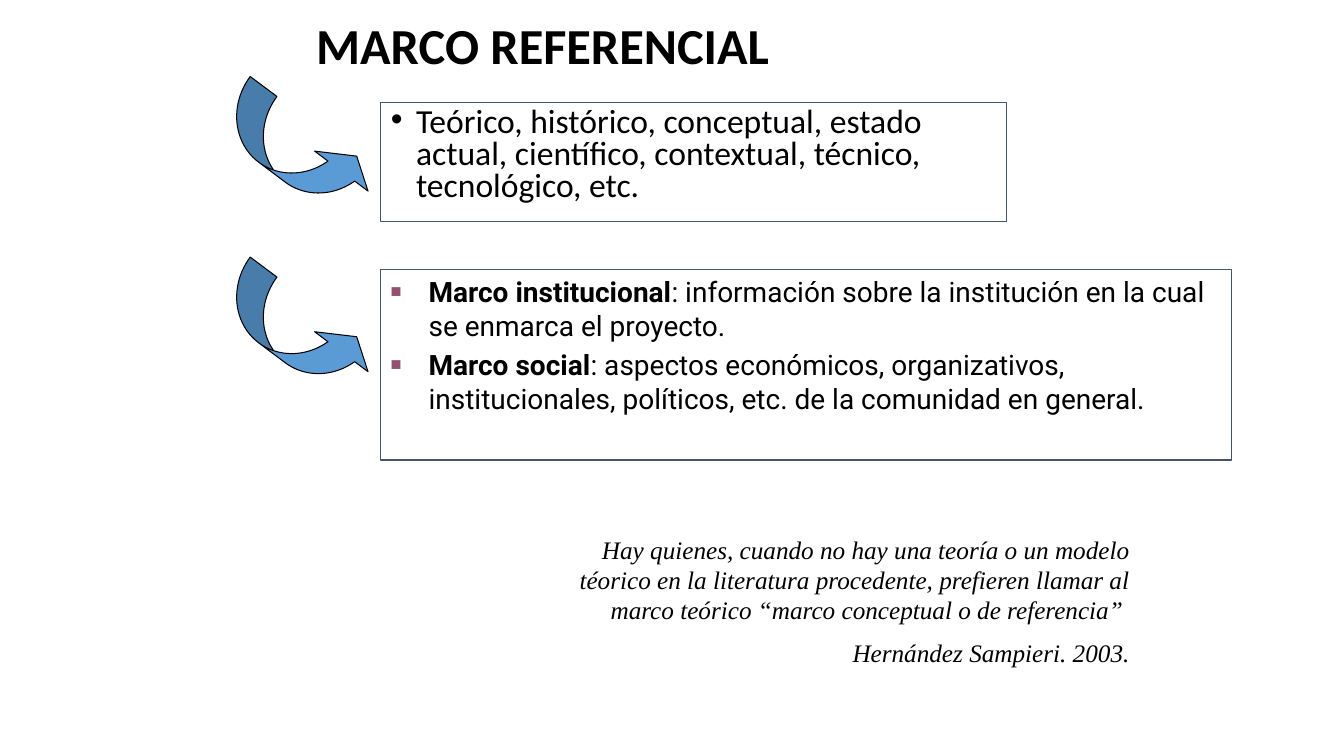
from dataclasses import dataclass

from lxml import etree
from pptx import Presentation
from pptx.dml.color import RGBColor
from pptx.enum import shapes, text
from pptx.oxml import ns
from pptx.util import Pt


@dataclass(frozen=True)
class Theme:
    ink: str = "000000"
    paper: str = "FFFFFF"
    frame: str = "44546A"
    arrow: str = "5B9BD5"
    marker: str = "954F72"
    heading_font: str = "Calibri"
    detail_font: str = "Roboto"
    quote_font: str = "Times New Roman"
    title_size: float = 36
    lead_size: float = 24
    detail_size: float = 20
    quote_size: float = 18
    line_width: float = 0.75


class SlideBuilder:
    def __init__(self, slide, theme):
        self.slide = slide
        self.theme = theme

    def place(self, shape, box):
        shape.left, shape.top, shape.width, shape.height = map(Pt, box)

    def paint(self, shape, fill, line):
        shape.fill.solid()
        shape.fill.fore_color.rgb = RGBColor.from_string(fill)
        shape.line.color.rgb = RGBColor.from_string(line)
        shape.line.width = Pt(self.theme.line_width)

    def frame(self, shape, anchor=text.MSO_ANCHOR.TOP):
        frame = shape.text_frame
        frame.word_wrap = True
        frame.auto_size = text.MSO_AUTO_SIZE.NONE
        frame.vertical_anchor = anchor
        return frame

    def bullet(self, paragraph, char, color, indent, percent=100):
        props = paragraph._p.get_or_add_pPr()
        props.set("marL", str(Pt(indent)))
        props.set("indent", str(-Pt(indent)))
        bullet_color = etree.SubElement(props, ns.qn("a:buClr"))
        etree.SubElement(bullet_color, ns.qn("a:srgbClr"), val=color)
        etree.SubElement(props, ns.qn("a:buSzPct"), val=str(percent * 1000))
        etree.SubElement(props, ns.qn("a:buFont"), typeface="Arial")
        etree.SubElement(props, ns.qn("a:buChar"), char=char)

    def format(self, paragraph, font, size, align, before=0, spacing=1.0):
        paragraph.alignment = align
        paragraph.space_before = Pt(before)
        paragraph.line_spacing = spacing
        paragraph.font.name = font
        paragraph.font.size = Pt(size)
        paragraph.font.color.rgb = RGBColor.from_string(self.theme.ink)

    def title(self, words, box):
        title = self.slide.shapes.title
        self.place(title, box)
        heading = self.frame(title, text.MSO_ANCHOR.MIDDLE).paragraphs[0]
        heading.text = words
        self.format(heading, self.theme.heading_font, self.theme.title_size,
                    text.PP_ALIGN.CENTER, spacing=0.9)
        heading.font.bold = True

    def lead(self, words, box):
        body = self.slide.placeholders[1]
        self.place(body, box)
        self.paint(body, self.theme.paper, self.theme.frame)
        kinds = self.frame(body).paragraphs[0]
        kinds.text = words
        self.bullet(kinds, "•", self.theme.ink, 18)
        self.format(kinds, self.theme.heading_font, self.theme.lead_size,
                    text.PP_ALIGN.LEFT, spacing=0.8)

    def definitions(self, entries, box):
        panel = self.slide.shapes.add_shape(
            shapes.MSO_SHAPE.RECTANGLE, *map(Pt, box))
        panel.shadow.inherit = False
        self.paint(panel, self.theme.paper, self.theme.frame)
        frame = self.frame(panel)
        for index, (term, meaning) in enumerate(entries):
            entry = frame.add_paragraph() if index else frame.paragraphs[0]
            self.bullet(entry, "■", self.theme.marker, 27, 65)
            self.format(entry, self.theme.detail_font, self.theme.detail_size,
                        text.PP_ALIGN.LEFT, before=4 if index else 0)
            label = entry.add_run()
            label.text = term
            label.font.bold = True
            entry.add_run().text = f": {meaning}"

    def curved_arrow(self, box):
        arrow = self.slide.shapes.add_shape(
            shapes.MSO_SHAPE.CURVED_RIGHT_ARROW, *map(Pt, box))
        arrow.shadow.inherit = False
        arrow.rotation = 306.8
        for index, value in enumerate((0.525, 1.049, 0.333)):
            arrow.adjustments[index] = value
        self.paint(arrow, self.theme.arrow, self.theme.ink)

    def quote(self, lines, box):
        frame = self.frame(self.slide.shapes.add_textbox(*map(Pt, box)))
        for index, words in enumerate(lines):
            line = frame.add_paragraph() if index else frame.paragraphs[0]
            line.text = words
            self.format(line, self.theme.quote_font, self.theme.quote_size,
                        text.PP_ALIGN.RIGHT, before=9 if index else 0)
            line.font.italic = True


def main():
    deck = Presentation()
    deck.slide_width, deck.slide_height = Pt(960), Pt(540)
    builder = SlideBuilder(deck.slides.add_slide(deck.slide_layouts[1]), Theme())

    # Heading and kinds of framework
    builder.title("MARCO REFERENCIAL", (144, 17.3, 487.4, 33.8))
    builder.lead("Teórico, histórico, conceptual, estado actual, científico, "
                 "contextual, técnico, tecnológico, etc.",
                 (272, 73, 447, 85))

    # Definitions
    builder.definitions([
        ("Marco institucional",
         "información sobre la institución en la cual se enmarca el proyecto."),
        ("Marco social",
         "aspectos económicos, organizativos, institucionales, políticos, etc. "
         "de la comunidad en general."),
    ], (272, 192.6, 608, 136))

    # Arrows leading to both boxes
    for top in (49, 178):
        builder.curved_arrow((190, top, 45.4, 118.8))

    # Closing quotation
    builder.quote([
        "Hay quienes, cuando no hay una teoría o un modelo téorico en la "
        "literatura procedente, prefieren llamar al marco teórico "
        "“marco conceptual o de referencia” ",
        "Hernández Sampieri. 2003.",
    ], (372, 378, 442, 104.4))

    deck.save("out.pptx")


if __name__ == "__main__":
    main()
